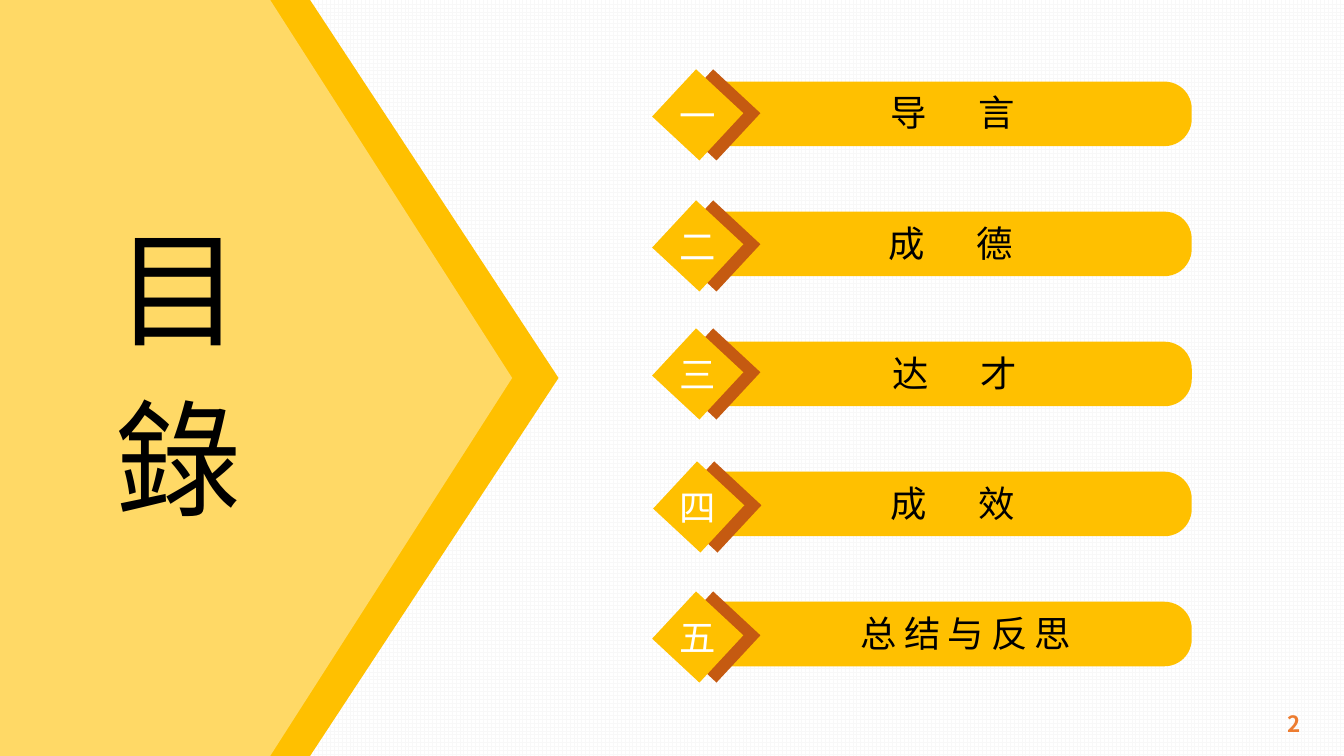
from lxml import etree
from pptx import Presentation
from pptx import util as u
from pptx.dml import color as dml_color
from pptx.enum import dml, shapes, text
from pptx.oxml import ns

Inches = u.Inches
SHAPE = shapes.MSO_SHAPE
COLOURS = {
    "white": "FFFFFF", "grid": "F2F2F2", "gold": "FFC000", "sand": "FFD966",
    "rust": "C55A11", "orange": "ED7D31", "black": "000000",
}
SANS = "Noto Sans CJK SC"
TITLE_FONT = "Noto Sans CJK JP"

BAR_TOP, BAR_PITCH, BAR_RIGHT = 0.81, 1.29, 11.82
DIAMOND, DIAMOND_TURN = 0.64, 42.9
SECOND_CHARACTER = 0.88

# numeral, title, bar left, title left, title width, diamond left, diamond top
CHAPTERS = [
    ("一", "导\t言", 6.78, 8.73, 1.82, 6.60, 0.82),
    ("二", "成\t德", 6.76, 8.71, 1.82, 6.60, 2.12),
    ("三", "达\t才", 6.80, 8.75, 1.82, 6.60, 3.39),
    ("四", "成\t效", 6.78, 8.73, 1.82, 6.61, 4.71),
    ("五", "总结与反思", 6.78, 8.44, 2.38, 6.60, 6.00),
]


def rgb(name):
    return dml_color.RGBColor.from_string(COLOURS[name])


def add_block(page, kind, left, top, width, height, colour,
              adjust=(), turn=0, opacity=None):
    block = page.shapes.add_shape(
        kind, Inches(left), Inches(top), Inches(width), Inches(height))
    block.shadow.inherit = False
    block.line.fill.background()
    block.fill.solid()
    block.fill.fore_color.rgb = rgb(colour)
    block.rotation = turn
    for index, value in enumerate(adjust):
        block.adjustments[index] = value
    if opacity is not None:
        tint = block._element.spPr.find(".//" + ns.qn("a:srgbClr"))
        etree.SubElement(tint, ns.qn("a:alpha"), val=str(opacity * 1000))
    return block


def add_text(page, words, left, top, width, height, size, colour="black",
             font=SANS, bold=False, align=text.PP_ALIGN.LEFT,
             anchor=text.MSO_ANCHOR.TOP, wrap=False, spacing=0,
             vertical=False, tab=None):
    box = page.shapes.add_textbox(
        Inches(left), Inches(top), Inches(width), Inches(height))
    frame = box.text_frame
    frame.word_wrap = wrap
    frame.vertical_anchor = anchor
    if vertical:
        frame._txBody.bodyPr.set("vert", "eaVert")
    para = frame.paragraphs[0]
    para.alignment = align
    if tab is not None:
        stops = etree.SubElement(para._p.get_or_add_pPr(), ns.qn("a:tabLst"))
        etree.SubElement(stops, ns.qn("a:tab"), pos=str(Inches(tab)), algn="l")
    span = para.add_run()
    span.text = words
    span.font.size = u.Pt(size)
    span.font.bold = bold
    span.font.color.rgb = rgb(colour)
    span.font.name = font
    properties = span._r.get_or_add_rPr()
    etree.SubElement(properties, ns.qn("a:ea"), typeface=font)
    if spacing:
        properties.set("spc", str(spacing * 100))
    return box


def add_background(page):
    fill = page.background.fill
    fill.patterned()
    fill.pattern = dml.MSO_PATTERN.LARGE_GRID
    fill.fore_color.rgb = rgb("grid")
    fill.back_color.rgb = rgb("white")
    add_block(page, SHAPE.RECTANGLE, 0, 0, 13.33, 7.5, "white", opacity=48)


def add_title_panel(page):
    for left, width, colour in ((-0.62, 6.16, "gold"), (-0.92, 6, "sand")):
        add_block(page, SHAPE.RIGHT_ARROW, left, 0, width, 7.5, colour,
                  adjust=(1, 0.4))
    add_text(page, "目 錄", 0.8, 2.14, 1.72, 3.59, 90, font=TITLE_FONT,
             spacing=5, vertical=True)


def add_chapter(page, row, chapter):
    numeral, title, bar_left, title_left, title_width, left, top = chapter
    bar_top = BAR_TOP + row * BAR_PITCH
    add_block(page, SHAPE.ROUNDED_RECTANGLE, bar_left, bar_top,
              BAR_RIGHT - bar_left, 0.64, "gold", adjust=(0.421,))
    add_text(page, title, title_left, bar_top + 0.04, title_width, 0.54, 26,
             spacing=5, tab=SECOND_CHARACTER if "\t" in title else None)
    for shift, colour in ((0.17, "rust"), (0, "gold")):
        add_block(page, SHAPE.RECTANGLE, left + shift, top, DIAMOND, DIAMOND,
                  colour, turn=DIAMOND_TURN)
    add_text(page, numeral, 6.64, top + 0.05, 0.59, 0.54, 26, colour="white")


def main():
    deck = Presentation()
    deck.slide_width, deck.slide_height = Inches(13.33), Inches(7.5)
    page = deck.slides.add_slide(deck.slide_layouts[6])

    add_background(page)
    add_title_panel(page)
    for row, chapter in enumerate(CHAPTERS):
        add_chapter(page, row, chapter)

    # Page number
    add_text(page, "2", 10, 6.98, 3, 0.4, 16, colour="orange", bold=True,
             align=text.PP_ALIGN.RIGHT, anchor=text.MSO_ANCHOR.MIDDLE,
             wrap=True)
    deck.save("out.pptx")


if __name__ == "__main__":
    main()
